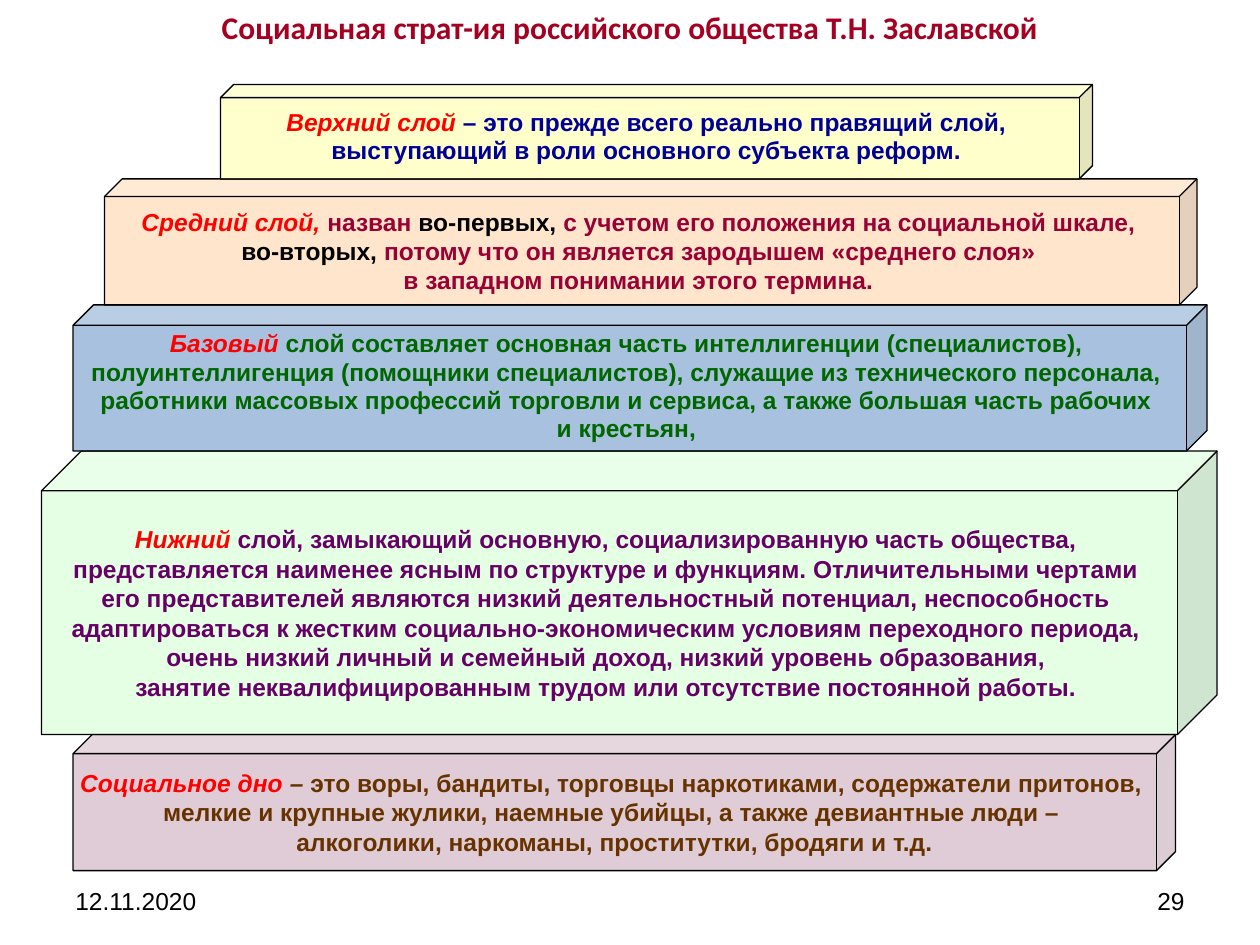
"""Build a slide of stacked cubes showing the layers of Russian society."""
from dataclasses import dataclass
from typing import NamedTuple

from lxml import etree
from pptx import Presentation
from pptx.dml.color import RGBColor
from pptx.enum.shapes import MSO_SHAPE
from pptx.enum.text import MSO_ANCHOR, PP_ALIGN
from pptx.oxml.ns import qn
from pptx.slide import Slide
from pptx.util import Inches, Pt

CUBE = MSO_SHAPE.CUBE
MIDDLE = MSO_ANCHOR.MIDDLE
LEFT, CENTER, RIGHT = PP_ALIGN.LEFT, PP_ALIGN.CENTER, PP_ALIGN.RIGHT


@dataclass(frozen=True)
class Theme:
    """Colours, fonts and sizes of the slide."""
    body: str = "Arial"
    head: str = "Calibri"
    small: int = 14
    large: int = 18
    edge: float = 0.75
    depth: float = 0.14
    title: str = "A50021"
    black: str = "000000"
    red: str = "FF0000"
    plum: str = "660033"
    brown: str = "663300"
    mint: str = "CCFFCC"
    violet: str = "660066"
    blue: str = "4F81BD"
    green: str = "006600"
    peach: str = "FFCC99"
    wine: str = "990033"
    yellow: str = "FFFF99"
    navy: str = "000099"


class Box(NamedTuple):
    """Left, top, width and height in inches."""
    x: float
    y: float
    w: float
    h: float


class Span(NamedTuple):
    """A piece of text that differs from its line."""
    text: str
    ink: str
    slant: bool = False


class Tier(NamedTuple):
    """One cube of the stack; plain strings take its ink."""
    box: Box
    fill: str
    alpha: int
    ink: str
    lines: list[list[str | Span]]
    tight: bool = False


class Label(NamedTuple):
    """A single line of text outside the stack."""
    box: Box
    text: str
    align: PP_ALIGN
    font: str
    size: int
    ink: str
    bold: bool = False


T = Theme()

LABELS = [
    Label(Box(0.5, 6.95, 2.33, 0.4), "12.11.2020", LEFT, T.body, T.small, T.black),
    Label(Box(7.17, 6.95, 2.33, 0.4), "29", RIGHT, T.body, T.small, T.black),
    Label(Box(0.25, 0, 9.5, 0.42), "Социальная страт-ия российского общества Т.Н. Заславской",
          CENTER, T.head, T.large, T.title, True),
]

TIERS = [
    Tier(Box(0.58, 5.83, 8.75, 1.08), T.plum, 20, T.brown, [
        [Span("Социальное дно", T.red, True), Span(" – ", T.brown, True),
         "это воры, бандиты, торговцы наркотиками, содержатели притонов, "],
        ["мелкие и крупные жулики, наемные убийцы, а также девиантные люди – "],
        ["алкоголики, наркоманы, проститутки, бродяги и т.д."],
    ]),
    Tier(Box(0.33, 3.58, 9.33, 2.25), T.mint, 51, T.violet, [
        [Span("Нижний ", T.red, True),
         "слой, замыкающий основную, социализированную часть общества, "],
        ["представляется наименее ясным по структуре и функциям. Отличительными чертами "],
        ["его представителей являются низкий деятельностный потенциал, неспособность "],
        ["адаптироваться к жестким социально-экономическим условиям переходного периода, "],
        ["очень низкий личный и семейный доход, низкий уровень образования, "],
        ["занятие неквалифицированным трудом или отсутствие постоянной работы. "],
    ]),
    Tier(Box(0.58, 2.42, 9, 1.16), T.blue, 49, T.green, [
        [Span("Базовый ", T.red, True),
         "слой составляет основная часть интеллигенции (специалистов), "],
        ["полуинтеллигенция (помощники специалистов), служащие из технического персонала, "],
        ["работники массовых профессий торговли и сервиса, а также большая часть рабочих "],
        ["и крестьян, "],
    ], True),
    Tier(Box(0.83, 1.42, 8.67, 1), T.peach, 51, T.wine, [
        [Span("Средний слой, ", T.red, True), "назван ", Span("во-первых,", T.black),
         " с учетом его положения на социальной шкале, "],
        [Span("во-вторых,", T.black), " потому что он является зародышем «среднего слоя» "],
        ["в западном понимании этого термина. "],
    ]),
    Tier(Box(1.75, 0.67, 6.92, 0.75), T.yellow, 50, T.navy, [
        [Span("Верхний слой ", T.red, True), "– это прежде всего реально правящий слой, "],
        ["выступающий в роли основного субъекта реформ. "],
    ], True),
]


def style(font, name: str, size: int, ink: str, bold: bool) -> None:
    """Set the face, size, colour and weight of a font."""
    font.name, font.size, font.bold = name, Pt(size), bold
    font.color.rgb = RGBColor.from_string(ink)


def add_label(slide: Slide, label: Label) -> None:
    """Draw a line of text in a box."""
    frame = slide.shapes.add_textbox(*map(Inches, label.box)).text_frame
    frame.word_wrap = True
    frame.vertical_anchor = MIDDLE
    para = frame.paragraphs[0]
    para.text, para.alignment = label.text, label.align
    style(para.font, label.font, label.size, label.ink, label.bold)


def add_tier(slide: Slide, tier: Tier) -> None:
    """Draw a translucent cube with its lines of text."""
    cube = slide.shapes.add_shape(CUBE, *map(Inches, tier.box))
    cube.shadow.inherit = False
    cube.adjustments[0] = T.depth
    cube.fill.solid()
    cube.fill.fore_color.rgb = RGBColor.from_string(tier.fill)
    tint = cube.fill._xPr.find(qn("a:solidFill"))[0]
    etree.SubElement(tint, qn("a:alpha"), val=str(tier.alpha * 1000))
    cube.line.color.rgb = RGBColor.from_string(T.black)
    cube.line.width = Pt(T.edge)
    frame = cube.text_frame
    frame.word_wrap = False
    frame.vertical_anchor = MIDDLE
    for i, line in enumerate(tier.lines):
        para = frame.add_paragraph() if i else frame.paragraphs[0]
        para.alignment = CENTER
        if tier.tight:
            para.line_spacing = 0.8
            para.space_before = Pt(T.small * 0.2 if i else 0)
        style(para.font, T.body, T.small, tier.ink, True)
        for part in line:
            span = part if isinstance(part, Span) else Span(part, tier.ink)
            run = para.add_run()
            run.text = span.text
            run.font.italic = span.slant
            run.font.color.rgb = RGBColor.from_string(span.ink)


def main() -> None:
    """Build and save the slide."""
    deck = Presentation()
    deck.slide_width, deck.slide_height = Inches(10), Inches(7.5)
    slide = deck.slides.add_slide(deck.slide_layouts[6])
    for label in LABELS:
        add_label(slide, label)
    for tier in TIERS:
        add_tier(slide, tier)
    deck.save("out.pptx")


if __name__ == "__main__":
    main()
